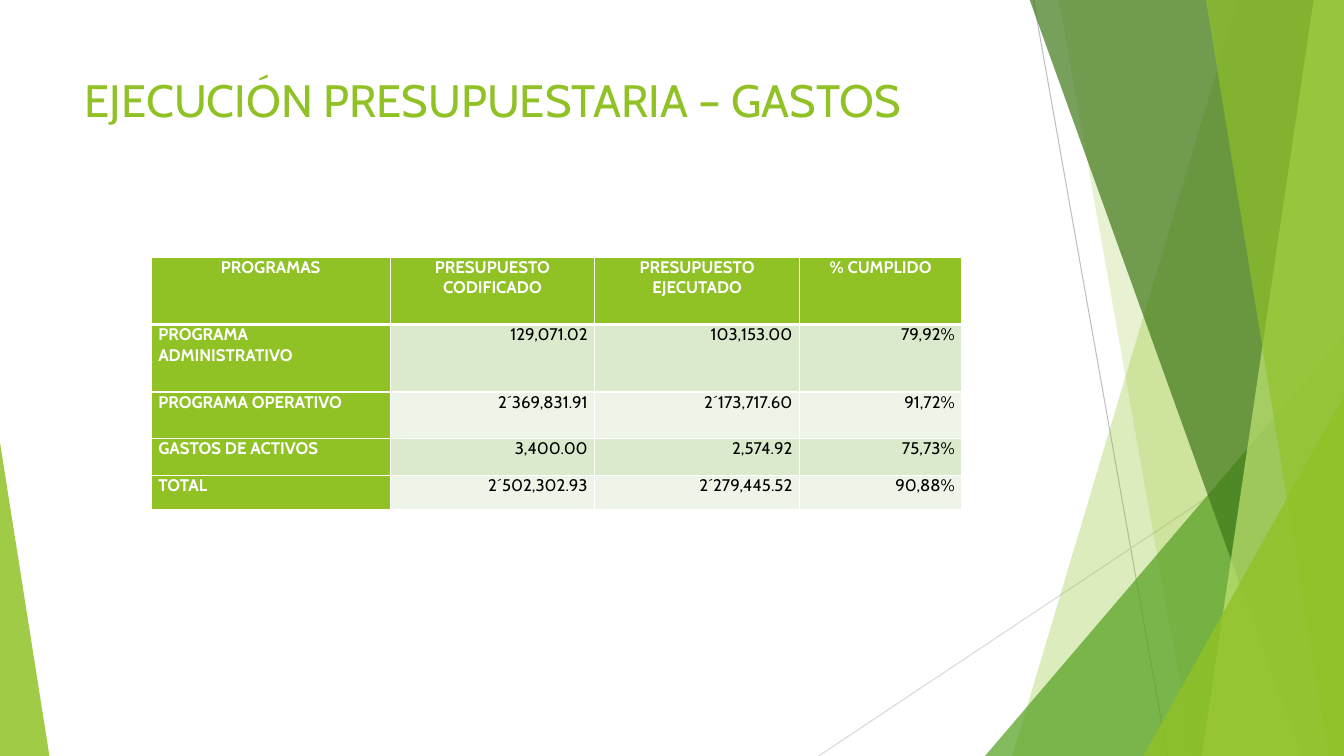
import pptx
import pptx.dml.color
import pptx.enum.shapes
import pptx.enum.text
import pptx.oxml
import pptx.oxml.ns
import pptx.util

Inches = pptx.util.Inches
Pt = pptx.util.Pt
RGB = pptx.dml.color.RGBColor.from_string
ALIGN = pptx.enum.text.PP_ALIGN
SHAPE = pptx.enum.shapes.MSO_SHAPE
NS = pptx.oxml.ns.nsdecls("a")

THEME = {
    "font": "Cabin",
    "title": Pt(32.4), "body": Pt(12),
    "green": "90C226", "leaf": "54A021", "forest": "3F7819", "lime": "C0E474",
    "band": ["DBE9CD", "EEF4E8"], "white": "FFFFFF", "black": "000000",
    "rays": ["BFBFBF", "D9D9D9"],
}
W, H = 13.33, 7.5


def paint(sp, color, alpha):
    sp.shadow.inherit = False
    sp.line.fill.background()
    sp.fill.solid()
    sp.fill.fore_color.rgb = RGB(THEME[color])
    clr = sp.fill._xPr.find(".//" + pptx.oxml.ns.qn("a:srgbClr"))
    clr.append(pptx.oxml.parse_xml(f'<a:alpha {NS} val="{alpha * 1000}"/>'))


def write(p, text, align, color, **formats):
    p.alignment = align
    r = p.add_run()
    r.text = text
    r.font.color.rgb = RGB(color)
    for name, value in {"name": THEME["font"], **formats}.items():
        setattr(r.font, name, value)


prs = pptx.Presentation()
prs.slide_width, prs.slide_height = Inches(W), Inches(H)
s = prs.slides.add_slide(prs.slide_layouts[5])

rays = [(10.25, 0, 11.58, H), (W, 4.03, 8.12, H)]
for ends, color in zip(rays, THEME["rays"]):
    ray = s.shapes.add_connector(
        pptx.enum.shapes.MSO_CONNECTOR.STRAIGHT, *[Inches(v) for v in ends])
    ray.line.color.rgb = RGB(color)
    ray.line.width = Pt(0.75)
    ray._element.spPr.append(pptx.oxml.parse_xml(f"<a:effectLst {NS}/>"))

facets = [
    ("blade", (12.28, 10.04), "green", 30),
    ("blade", (10.5, 11.83), "green", 20),
    ("triangle", (9.77, 3.33, 3.56, 1), "leaf", 72),
    ("blade", (10.21, 12.91), "forest", 70),
    ("blade", (13.03, 11.92), "lime", 70),
    ("blade", (11.96, 13.18), "green", 65),
    ("triangle", (11.34, 3.93, 1.99, 1), "green", 80),
    ("triangle", (0, 4.39, 0.49, 0), "green", 85),
]
for kind, geometry, color, alpha in facets:
    if kind == "blade":
        top, bottom = geometry
        fb = s.shapes.build_freeform(Inches(top), Inches(-0.01))
        fb.add_line_segments(
            [(Inches(x), Inches(y)) for x, y in [(W, -0.01), (W, H), (bottom, H)]])
        sp = fb.convert_to_shape()
    else:
        left, top, width, apex = geometry
        sp = s.shapes.add_shape(SHAPE.ISOSCELES_TRIANGLE, Inches(left), Inches(top),
                                Inches(width), Inches(H - top))
        sp.adjustments[0] = apex
    paint(sp, color, alpha)

title = s.shapes.title
for name, value in {"left": 0.74, "top": 0.67, "width": 9.4, "height": 0.92}.items():
    setattr(title, name, Inches(value))
tf = title.text_frame
tf.word_wrap = True
tf.auto_size = pptx.enum.text.MSO_AUTO_SIZE.NONE
tf.vertical_anchor = pptx.enum.text.MSO_ANCHOR.TOP
write(tf.paragraphs[0], "EJECUCIÓN PRESUPUESTARIA – GASTOS", ALIGN.LEFT,
      THEME["green"], size=THEME["title"], bold=False)

rows = [
    ["PROGRAMAS", "PRESUPUESTO CODIFICADO", "PRESUPUESTO EJECUTADO", "% CUMPLIDO"],
    ["PROGRAMA ADMINISTRATIVO", "129,071.02", "103,153.00", "79,92%"],
    ["PROGRAMA OPERATIVO", "2´369,831.91", "2´173,717.60", "91,72%"],
    ["GASTOS DE ACTIVOS", "3,400.00", "2,574.92", "75,73%"],
    ["TOTAL", "2´502,302.93", "2´279,445.52", "90,88%"],
]
widths = [2.37, 2.03, 2.03, 1.61]
heights = [0.67, 0.67, 0.46, 0.37, 0.34]
margins = {"margin_left": 0.07, "margin_right": 0.07, "margin_top": 0, "margin_bottom": 0}
table = s.shapes.add_table(len(rows), len(widths), Inches(1.5), Inches(2.55),
                           Inches(sum(widths)), Inches(sum(heights))).table
for column, width in zip(table.columns, widths):
    column.width = Inches(width)
for i, texts in enumerate(rows):
    table.rows[i].height = Inches(heights[i])
    for j, text in enumerate(texts):
        cell = table.cell(i, j)
        heading = i == 0 or j == 0
        for name, value in margins.items():
            setattr(cell, name, Inches(value))
        borders = {"L": 1, "R": 1, "T": 3 if i == 1 else 1, "B": 3 if i == 0 else 1}
        for side, points in borders.items():
            cell._tc.get_or_add_tcPr().append(pptx.oxml.parse_xml(
                f'<a:ln{side} {NS} w="{Pt(points)}"><a:solidFill>'
                f'<a:srgbClr val="{THEME["white"]}"/></a:solidFill></a:ln{side}>'))
        cell.fill.solid()
        cell.fill.fore_color.rgb = RGB(
            THEME["green"] if heading else THEME["band"][(i - 1) % 2])
        if i == 0:
            align = ALIGN.CENTER
        elif j > 0:
            align = ALIGN.RIGHT
        else:
            align = ALIGN.LEFT if text == "TOTAL" else ALIGN.JUSTIFY
        write(cell.text_frame.paragraphs[0], text, align,
              THEME["white"] if heading else THEME["black"],
              size=THEME["body"], bold=heading)

prs.save("out.pptx")
